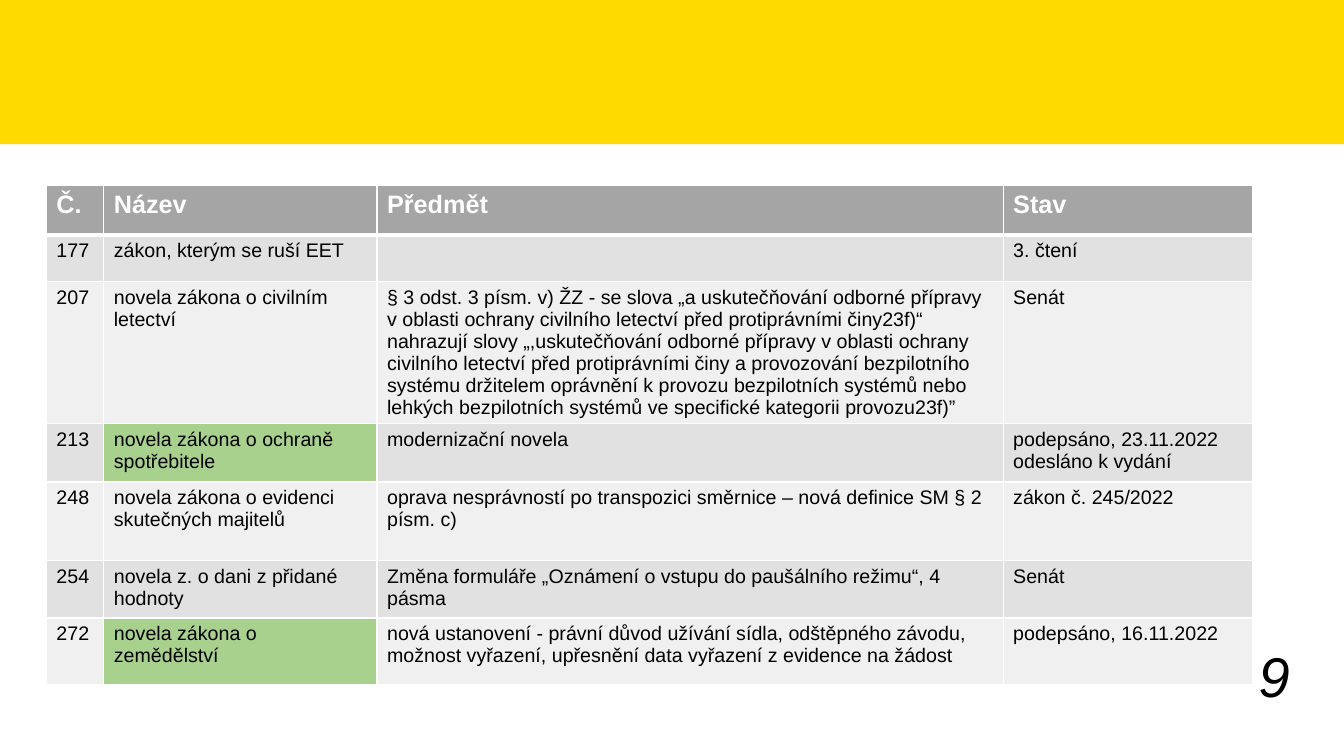
from lxml.etree import SubElement
from pptx import Presentation
from pptx.dml.color import RGBColor
from pptx.enum.shapes import MSO_SHAPE
from pptx.enum.text import MSO_ANCHOR, PP_ALIGN
from pptx.oxml.ns import qn
from pptx.util import Inches, Pt

COLORS = {
    "band": "FFD900",
    "header": "A5A5A5",
    "odd": "E1E1E1",
    "even": "F0F0F0",
    "highlight": "A9D18E",
    "white": "FFFFFF",
    "black": "000000",
}

COLUMN_WIDTHS = [0.57, 2.71, 6.21, 2.47]
ROW_HEIGHTS = [0.49, 0.46, 1.4, 0.58, 0.78, 0.57, 0.66]
HIGHLIGHTED = {"213", "272"}
LAWS = [
    ["Č.", "Název", "Předmět", "Stav"],
    ["177", "zákon, kterým se ruší EET", "", "3. čtení"],
    ["207", "novela zákona o civilním letectví",
     "§ 3 odst. 3 písm. v) ŽZ - se slova „a uskutečňování odborné přípravy "
     "v oblasti ochrany civilního letectví před protiprávními činy23f)“ "
     "nahrazují slovy „,uskutečňování odborné přípravy v oblasti ochrany "
     "civilního letectví před protiprávními činy a provozování bezpilotního "
     "systému držitelem oprávnění k provozu bezpilotních systémů nebo "
     "lehkých bezpilotních systémů ve specifické kategorii provozu23f)”",
     "Senát"],
    ["213", "novela zákona o ochraně spotřebitele", "modernizační novela",
     "podepsáno, 23.11.2022 odesláno k vydání"],
    ["248", "novela zákona o evidenci skutečných majitelů",
     "oprava nesprávností po transpozici směrnice – nová definice SM § 2 písm. c)",
     "zákon č. 245/2022"],
    ["254", "novela z. o dani z přidané hodnoty",
     "Změna formuláře „Oznámení o vstupu do paušálního režimu“, 4 pásma",
     "Senát"],
    ["272", "novela zákona o zemědělství",
     "nová ustanovení - právní důvod užívání sídla, odštěpného závodu, "
     "možnost vyřazení, upřesnění data vyřazení z evidence na žádost",
     "podepsáno, 16.11.2022"],
]


class SlideBuilder:
    font = "Arial"

    def __init__(self, slide):
        self.slide = slide

    def color(self, name):
        return RGBColor.from_string(COLORS[name])

    def paint(self, target, name):
        target.fill.solid()
        target.fill.fore_color.rgb = self.color(name)

    def run(self, p, text, size, color="black", bold=False, italic=False):
        r = p.add_run()
        r.text = text
        r.font.name = self.font
        r.font.size = Pt(size)
        r.font.bold = bold
        r.font.italic = italic
        r.font.color.rgb = self.color(color)

    def rect(self, left, top, width, height, fill):
        sp = self.slide.shapes.add_shape(
            MSO_SHAPE.RECTANGLE,
            Inches(left), Inches(top), Inches(width), Inches(height))
        sp.shadow.inherit = False
        self.paint(sp, fill)
        sp.line.fill.background()

    def text(self, left, top, width, height, text, size, italic=False):
        sp = self.slide.shapes.add_textbox(
            Inches(left), Inches(top), Inches(width), Inches(height))
        tf = sp.text_frame
        tf.word_wrap = True
        tf.vertical_anchor = MSO_ANCHOR.BOTTOM
        p = tf.paragraphs[0]
        p.alignment = PP_ALIGN.RIGHT
        self.run(p, text, size, italic=italic)

    def borders(self, cell, top, bottom):
        tc_pr = cell._tc.get_or_add_tcPr()
        for side, width in zip("LRTB", (1, 1, top, bottom)):
            ln = SubElement(tc_pr, qn(f"a:ln{side}"), w=str(Pt(width)))
            fill = SubElement(ln, qn("a:solidFill"))
            SubElement(fill, qn("a:srgbClr"), val=COLORS["white"])

    def table(self, left, top, widths, heights, rows):
        table = self.slide.shapes.add_table(
            len(rows), len(widths), Inches(left), Inches(top),
            Inches(sum(widths)), Inches(sum(heights))).table
        for column, width in zip(table.columns, widths):
            column.width = Inches(width)
        for i, (row, height) in enumerate(zip(rows, heights)):
            table.rows[i].height = Inches(height)
            for j, text in enumerate(row):
                self.cell(table.cell(i, j), text, i, j == 1 and row[0] in HIGHLIGHTED)

    def cell(self, cell, text, row, highlighted):
        header = row == 0
        self.borders(cell, 3 if row == 1 else 1, 3 if header else 1)
        band = "header" if header else "odd" if row % 2 else "even"
        self.paint(cell, "highlight" if highlighted else band)
        if text:
            self.run(cell.text_frame.paragraphs[0], text, 18 if header else 14,
                     "white" if header else "black", bold=header)


def main():
    prs = Presentation()
    prs.slide_width = Inches(13.33)
    prs.slide_height = Inches(7.5)
    s = SlideBuilder(prs.slides.add_slide(prs.slide_layouts[6]))
    s.rect(0, 0, 13.33, 1.43, "band")
    s.table(0.46, 1.84, COLUMN_WIDTHS, ROW_HEIGHTS, LAWS)
    s.text(9.89, 6.51, 3, 0.57, "9", 40, italic=True)
    prs.save("out.pptx")


if __name__ == "__main__":
    main()
